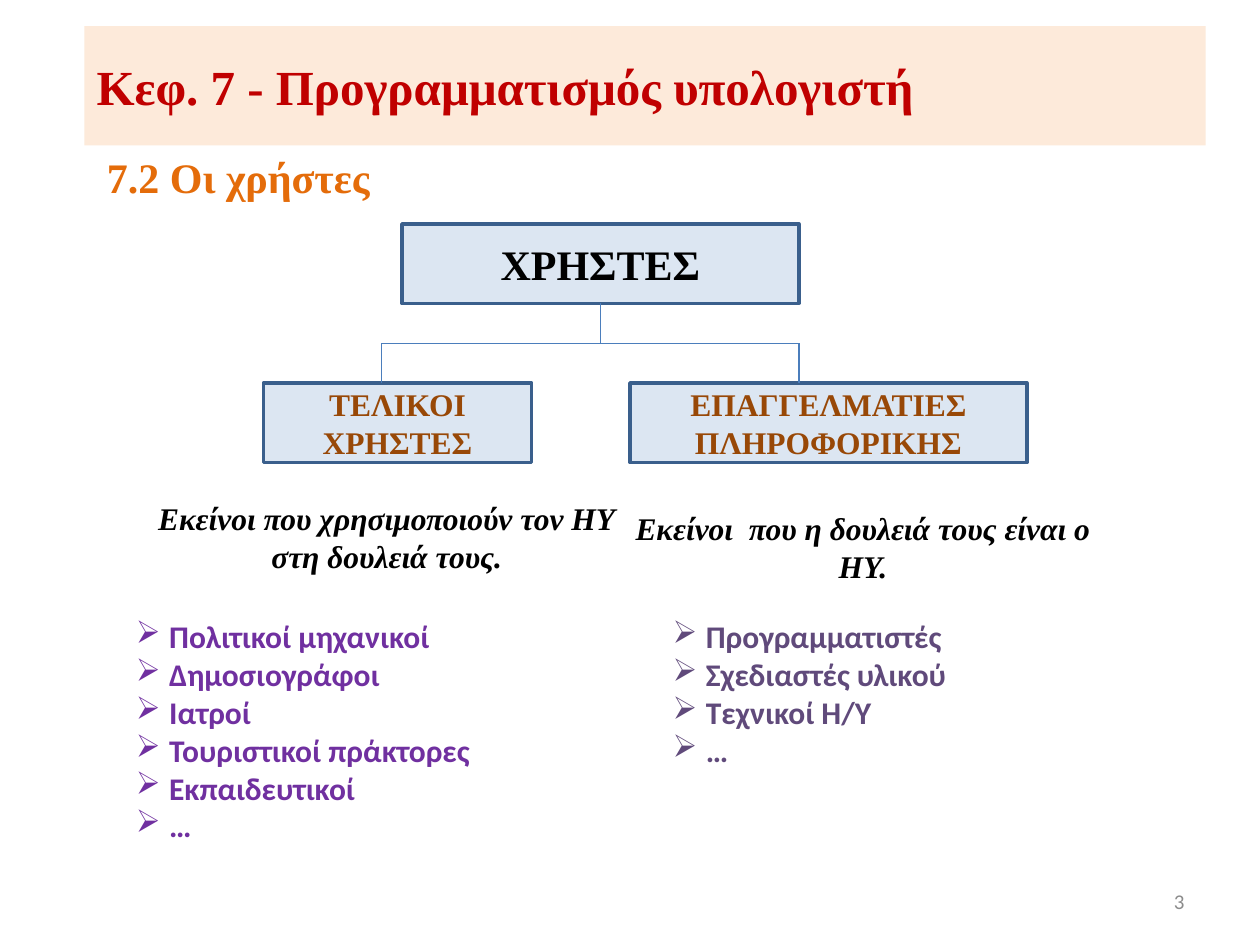
from lxml import etree
from pptx import Presentation
from pptx import util as u
from pptx.dml import color
from pptx.enum import shapes, text
from pptx.oxml import ns

RED = color.RGBColor(0xC0, 0x00, 0x00)
ORANGE = color.RGBColor(0xE4, 0x6C, 0x0A)
PEACH = color.RGBColor(0xFD, 0xEA, 0xDA)
PALE_BLUE = color.RGBColor(0xDC, 0xE6, 0xF2)
EDGE_BLUE = color.RGBColor(0x3A, 0x5F, 0x8C)
LINK_BLUE = color.RGBColor(0x4B, 0x7E, 0xBC)
BROWN = color.RGBColor(0x98, 0x48, 0x07)
PURPLE = color.RGBColor(0x70, 0x30, 0xA0)
VIOLET = color.RGBColor(0x60, 0x4A, 0x7B)
GRAY = color.RGBColor(0x8C, 0x8C, 0x8C)
BLACK = color.RGBColor(0x00, 0x00, 0x00)

SERIF = "Times New Roman"
SANS = "Calibri"
LEFT, CENTER, RIGHT = text.PP_ALIGN.LEFT, text.PP_ALIGN.CENTER, text.PP_ALIGN.RIGHT
TOP, MIDDLE = text.MSO_ANCHOR.TOP, text.MSO_ANCHOR.MIDDLE
BULLET_INDENT = 19


def points(values):
    return [u.Pt(value) for value in values]


def add_bullet(paragraph):
    properties = paragraph._p.get_or_add_pPr()
    properties.set("marL", str(u.Pt(BULLET_INDENT)))
    properties.set("indent", str(-u.Pt(BULLET_INDENT)))
    etree.SubElement(properties, ns.qn("a:buChar")).set("char", "➢")


def write(holder, lines, style, ink, align=LEFT, anchor=TOP, bulleted=False):
    frame = holder.text_frame
    frame.word_wrap = True
    frame.vertical_anchor = anchor
    for index, line in enumerate(lines):
        paragraph = frame.add_paragraph() if index else frame.paragraphs[0]
        paragraph.alignment = align
        if bulleted:
            add_bullet(paragraph)
        run = paragraph.add_run()
        run.text = line
        for name, value in style.items():
            setattr(run.font, name, value)
        run.font.color.rgb = ink


def add_text(slide, area, lines, style, ink, **layout):
    label = slide.shapes.add_textbox(*points(area))
    write(label, lines, style, ink, **layout)


def add_panel(slide, area, caption, style, ink, fill, edge=None, align=CENTER):
    panel = slide.shapes.add_shape(shapes.MSO_SHAPE.RECTANGLE, *points(area))
    panel.shadow.inherit = False
    panel.fill.solid()
    panel.fill.fore_color.rgb = fill
    if edge is None:
        panel.line.fill.background()
    else:
        panel.line.color.rgb = edge
        panel.line.width = u.Pt(2)
    write(panel, [caption], style, ink, align=align, anchor=MIDDLE)


def add_link(slide, *ends):
    link = slide.shapes.add_connector(shapes.MSO_CONNECTOR.STRAIGHT, *points(ends))
    link.line.color.rgb = LINK_BLUE
    link.line.width = u.Pt(0.75)
    etree.SubElement(link._element.spPr, ns.qn("a:effectLst"))


def add_tree(slide, heading, branch):
    root_top, box_height, branch_top = 128, 45.4, 218.9
    boxes = [
        (229.7, root_top, 226.8, "ΧΡΗΣΤΕΣ", heading, BLACK),
        (150.5, branch_top, 153.4, "ΤΕΛΙΚΟΙ ΧΡΗΣΤΕΣ", branch, BROWN),
        (360, branch_top, 226.8, "ΕΠΑΓΓΕΛΜΑΤΙΕΣ ΠΛΗΡΟΦΟΡΙΚΗΣ", branch, BROWN),
    ]
    for left, top, width, caption, style, ink in boxes:
        area = (left, top, width, box_height)
        add_panel(slide, area, caption, style, ink, PALE_BLUE, EDGE_BLUE)

    trunk_x, root_bottom = 343, root_top + box_height
    joint_y = (root_bottom + branch_top) / 2
    add_link(slide, trunk_x, root_bottom, trunk_x, joint_y)
    for branch_x in (218.2, 456.5):
        add_link(slide, trunk_x, joint_y, branch_x, joint_y)
        add_link(slide, branch_x, joint_y, branch_x, branch_top)


def main():
    deck = Presentation()
    deck.slide_width, deck.slide_height = points((720, 540))
    slide = deck.slides.add_slide(deck.slide_layouts[6])

    title = {"name": SERIF, "size": u.Pt(28), "bold": True}
    heading = {**title, "size": u.Pt(24)}
    branch = {**title, "size": u.Pt(18)}
    definition = {**branch, "italic": True}
    example = {**branch, "name": SANS}
    page = {"name": SANS, "size": u.Pt(12)}

    add_panel(slide, (48.2, 15, 640.8, 68.2), "Κεφ. 7 - Προγραμματισμός υπολογιστή",
              title, RED, PEACH, align=LEFT)
    add_text(slide, (54, 82.8, 504, 39.6), ["7.2 Οι χρήστες"], heading, ORANGE)
    add_text(slide, (516.2, 500.4, 167.8, 28.8), ["3"], page, GRAY,
             align=RIGHT, anchor=MIDDLE)

    add_tree(slide, heading, branch)

    definitions = [
        (82.1, 281.5, "Εκείνοι που χρησιμοποιούν τον ΗΥ στη δουλειά τους."),
        (354.2, 287.3, "Εκείνοι  που η δουλειά τους είναι ο ΗΥ."),
    ]
    for left, top, sentence in definitions:
        add_text(slide, (left, top, 277.9, 51), [sentence], definition, BLACK, align=CENTER)

    examples = [
        (70.6, 221, 138.2, PURPLE, ["Πολιτικοί μηχανικοί", "Δημοσιογράφοι", "Ιατροί",
                                    "Τουριστικοί πράκτορες", "Εκπαιδευτικοί", "…"]),
        (377.3, 193, 94.3, VIOLET, ["Προγραμματιστές", "Σχεδιαστές υλικού",
                                    "Τεχνικοί Η/Υ", "…"]),
    ]
    for left, width, height, ink, jobs in examples:
        add_text(slide, (left, 349.2, width, height), jobs, example, ink, bulleted=True)

    deck.save("out.pptx")


if __name__ == "__main__":
    main()
